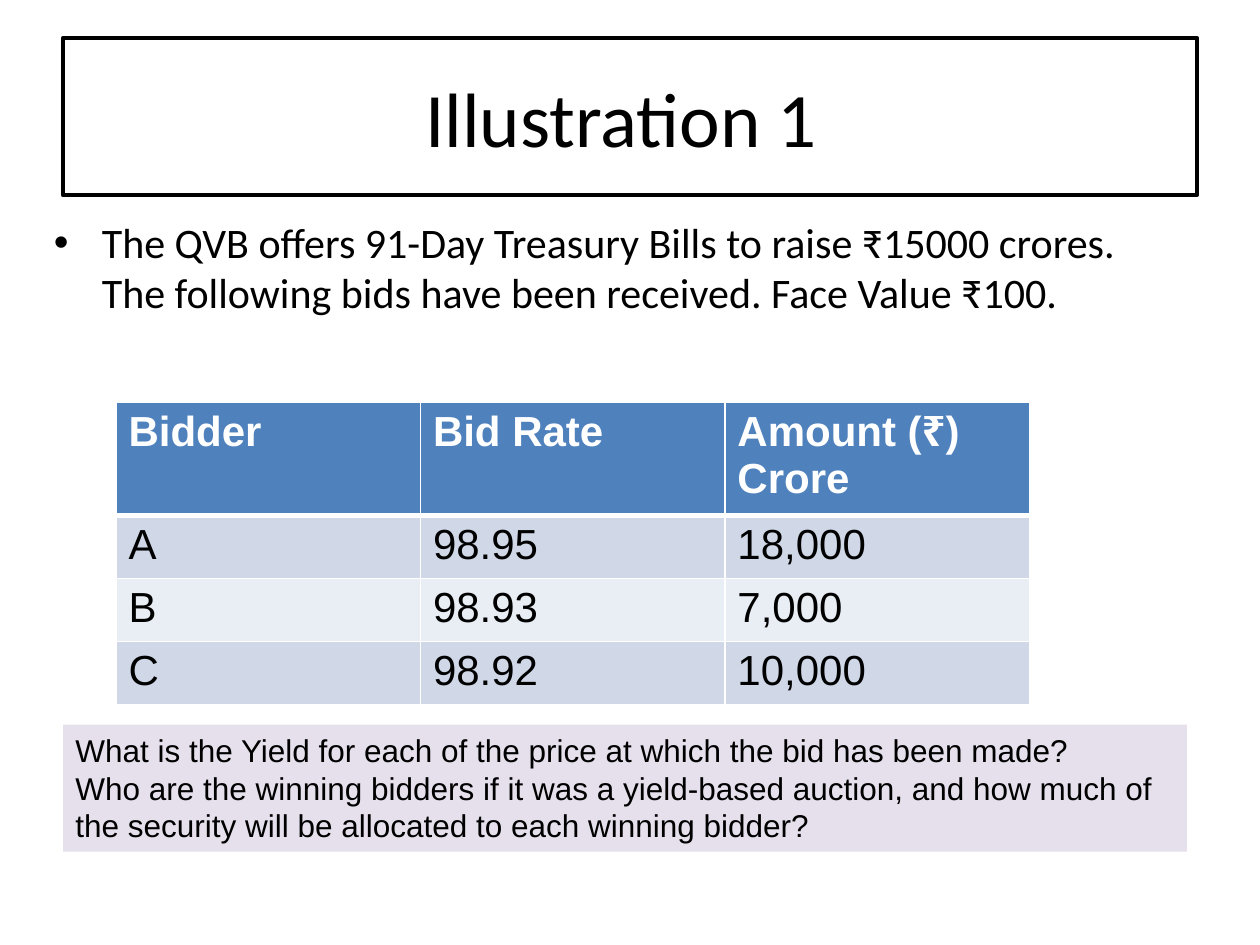
from lxml.etree import SubElement
from pptx import Presentation
from pptx.dml.color import RGBColor
from pptx.enum.shapes import MSO_SHAPE
from pptx.enum.text import MSO_ANCHOR, PP_ALIGN
from pptx.oxml.ns import qn
from pptx.util import Pt

PX = 9144
COLORS = {
    "text": "000000",
    "header": "4F81BD",
    "header_text": "FFFFFF",
    "border": "FFFFFF",
    "odd": "D0D8E8",
    "even": "E9EDF4",
    "question": "E6E0EC",
}


def box(left, top, width, height):
    return [v * PX for v in (left, top, width, height)]


def style(tf, size, font, color="text", bold=False, align=PP_ALIGN.LEFT):
    for p in tf.paragraphs:
        p.alignment = align
        for r in p.runs:
            r.font.size = Pt(size)
            r.font.name = font
            r.font.bold = bold
            r.font.color.rgb = RGBColor.from_string(COLORS[color])


prs = Presentation()
prs.slide_width, prs.slide_height = 1000 * PX, 750 * PX
s = prs.slides.add_slide(prs.slide_layouts[5])

title = s.shapes.title
title.left, title.top, title.width, title.height = box(50, 30, 900, 125)
title.line.color.rgb = RGBColor.from_string(COLORS["text"])
title.line.width = Pt(2.25)
tf = title.text_frame
tf.text = "Illustration 1 "
tf.vertical_anchor = MSO_ANCHOR.MIDDLE
style(tf, 44, "Calibri", align=PP_ALIGN.CENTER)

body = s.shapes.add_textbox(*box(33, 167, 917, 533))
tf = body.text_frame
tf.word_wrap = True
tf.text = (
    "The QVB offers 91-Day Treasury Bills to raise ₹15000 crores. "
    "The following bids have been received. Face Value ₹100."
)
style(tf, 24, "Calibri")
p = tf.paragraphs[0]
p.space_before = Pt(4.8)
pPr = p._p.get_or_add_pPr()
pPr.set("marL", str(38 * PX))
pPr.set("indent", str(-38 * PX))
SubElement(pPr, qn("a:buFont"), typeface="Arial")
SubElement(pPr, qn("a:buChar"), char="•")

bids = [
    ("Bidder", "Bid Rate", "Amount (₹) Crore"),
    ("A", "98.95", "18,000"),
    ("B", "98.93", "7,000"),
    ("C", "98.92", "10,000"),
]
table = s.shapes.add_table(len(bids), 3, *box(92, 319, 725, 240)).table
for i, bid in enumerate(bids):
    table.rows[i].height = (50 if i else 90) * PX
    fill = "header" if i == 0 else "odd" if i % 2 else "even"
    for j, value in enumerate(bid):
        cell = table.cell(i, j)
        cell.text_frame.text = value
        tcPr = cell._tc.get_or_add_tcPr()
        for side in ("L", "R", "T", "B"):
            heavy = (i, side) in ((0, "B"), (1, "T"))
            ln = SubElement(tcPr, qn(f"a:ln{side}"), w=str(Pt(3 if heavy else 1)))
            SubElement(SubElement(ln, qn("a:solidFill")), qn("a:srgbClr"), val=COLORS["border"])
        cell.fill.solid()
        cell.fill.fore_color.rgb = RGBColor.from_string(COLORS[fill])
        style(cell.text_frame, 24, "Arial", "text" if i else "header_text", bold=i == 0)

sp = s.shapes.add_shape(MSO_SHAPE.RECTANGLE, *box(50, 575, 892, 101))
sp.shadow.inherit = False
sp.fill.solid()
sp.fill.fore_color.rgb = RGBColor.from_string(COLORS["question"])
sp.line.fill.background()
tf = sp.text_frame
tf.word_wrap = True
tf.vertical_anchor = MSO_ANCHOR.TOP
tf.text = (
    "What is the Yield for each of the price at which the bid has been made?\n"
    "Who are the winning bidders if it was a yield-based auction, and how much of "
    "the security will be allocated to each winning bidder?"
)
style(tf, 18, "Arial")

prs.save("out.pptx")
